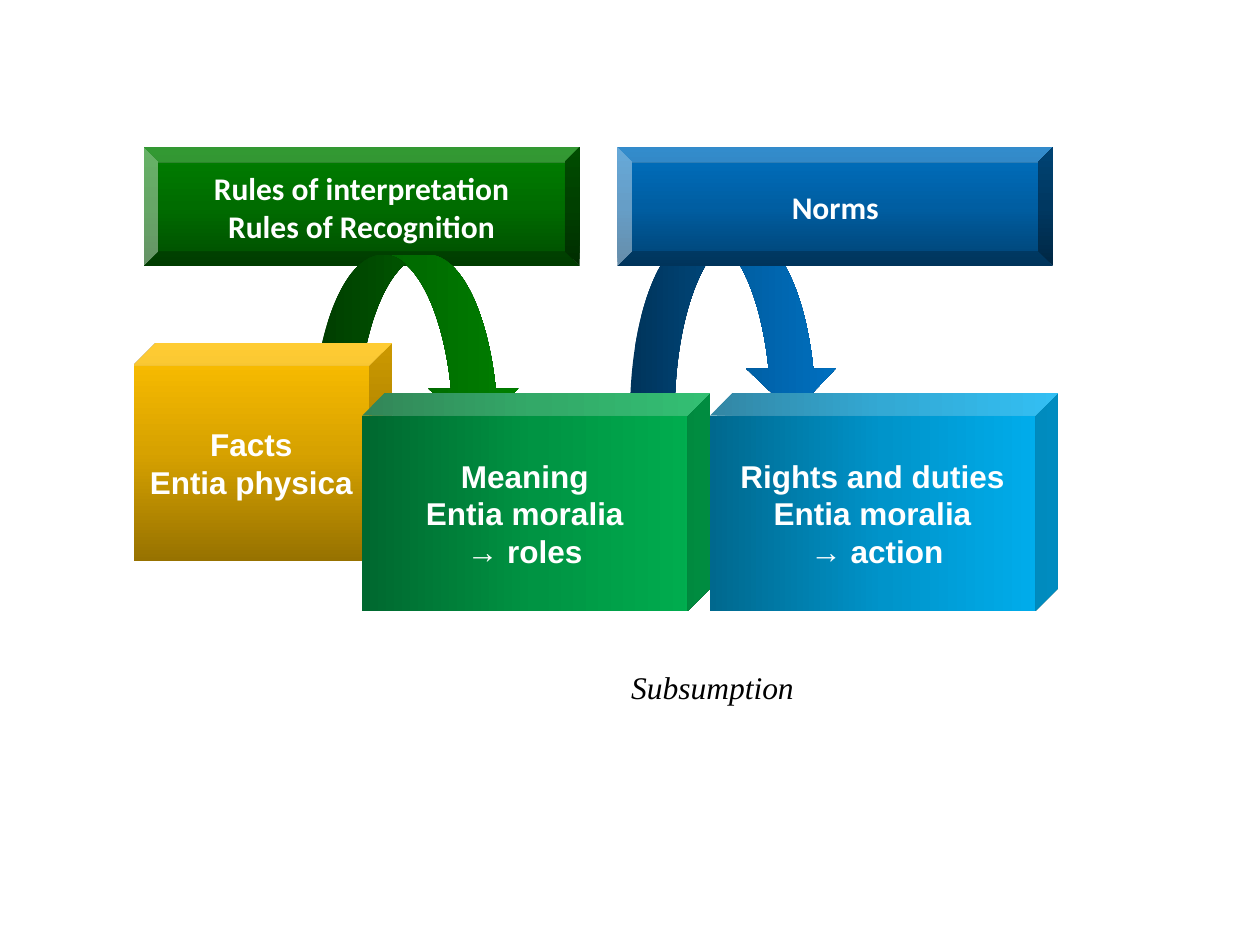
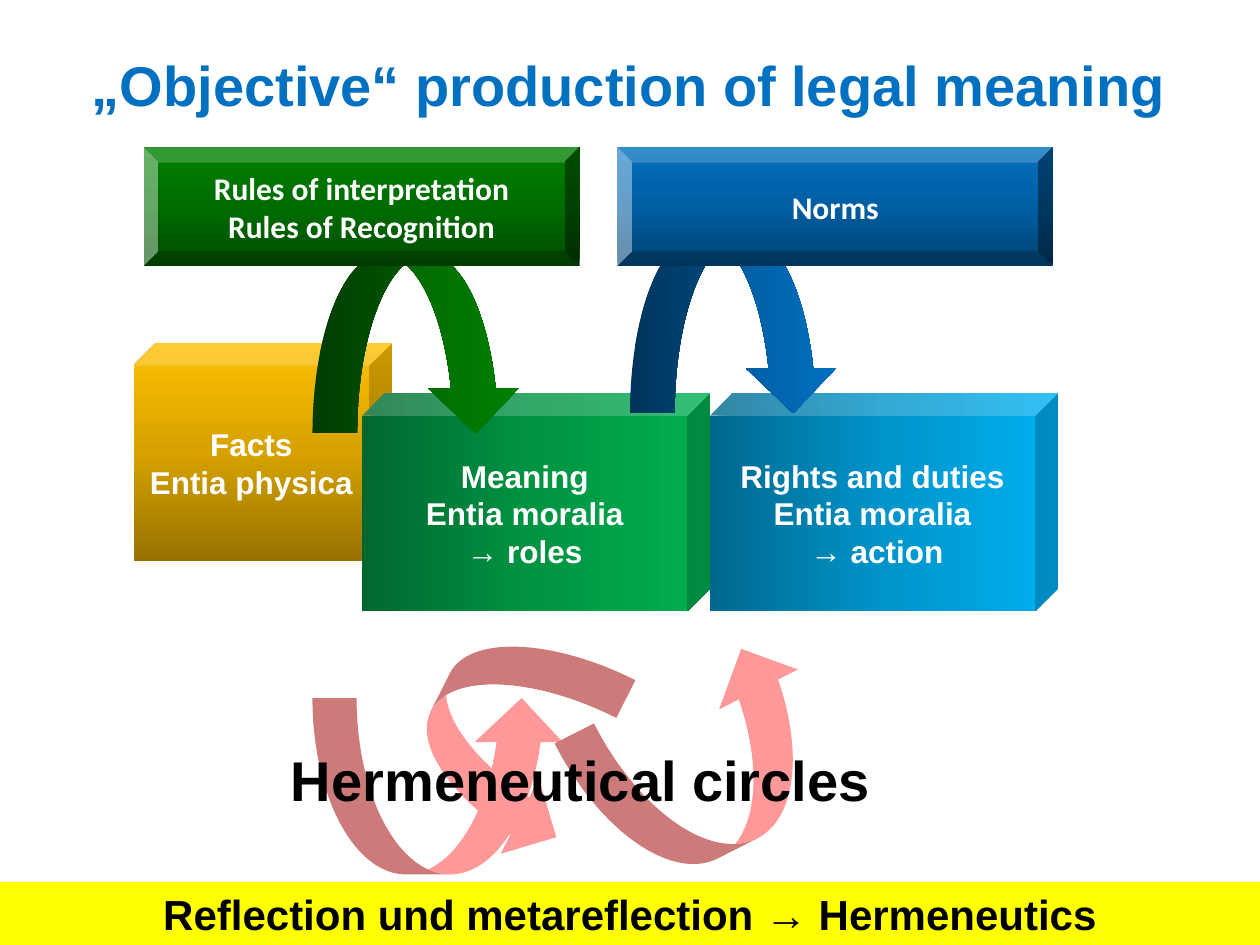
from lxml import etree
from pptx import Presentation, util as u
from pptx.dml.color import RGBColor
from pptx.enum import shapes, text
from pptx.oxml.ns import qn

Kind = shapes.MSO_SHAPE
GREEN = ("004C00", "006C00", "008000")
BLUE = ("004272", "005EA2", "0070C0")
GOLD = ("977200", "D7A200", "FFC000")
MINT = ("00682F", "009443", "00B050")
SKY = ("00688E", "0094CA", "00B0F0")
ROSE, YELLOW, WHITE, BLACK = "FF9999", "FFFF00", "FFFFFF", "000000"
COLS, ROWS = 100, 75


def color(code):
    return RGBColor.from_string(code)


class Deck:
    def __init__(self):
        self.prs = Presentation()
        self.prs.slide_width = u.Inches(10)
        self.prs.slide_height = u.Inches(7.5)
        self.page = None

    def add_page(self, layout):
        self.page = self.prs.slides.add_slide(self.prs.slide_layouts[layout])

    def box(self, left, top, wide, high):
        col = self.prs.slide_width / COLS
        row = self.prs.slide_height / ROWS
        return [u.Emu(round(n)) for n in
                (left * col, top * row, wide * col, high * row)]

    def put_text(self, frame, lines, size=18, font="Arial", ink=WHITE,
                 bold=True, slant=False, wrap=True,
                 anchor=text.MSO_ANCHOR.MIDDLE):
        frame.word_wrap = wrap
        frame.auto_size = text.MSO_AUTO_SIZE.NONE
        frame.vertical_anchor = anchor
        for i, line in enumerate(lines):
            par = frame.add_paragraph() if i else frame.paragraphs[0]
            par.alignment = text.PP_ALIGN.CENTER
            run = par.add_run()
            run.text = line
            run.font.size = u.Pt(size)
            run.font.name = font
            run.font.bold = bold
            run.font.italic = slant
            run.font.color.rgb = color(ink)

    def blend(self, item, tones, angle):
        item.fill.gradient()
        item.fill.gradient_angle = angle
        stops = next(item.element.iter(qn("a:gsLst")))
        for old in list(stops):
            stops.remove(old)
        for pos, tone in zip((0, 50000, 100000), tones):
            stop = etree.SubElement(stops, qn("a:gs"), pos=str(pos))
            etree.SubElement(stop, qn("a:srgbClr"), val=tone)

    def shape(self, kind, area, paint, lines=(), angle=0, turn=0, **style):
        item = self.page.shapes.add_shape(kind, *self.box(*area))
        item.shadow.inherit = False
        item.line.fill.background()
        item.rotation = turn
        if isinstance(paint, str):
            item.fill.solid()
            item.fill.fore_color.rgb = color(paint)
        else:
            self.blend(item, paint, angle)
        self.put_text(item.text_frame, lines, **style)
        return item

    def cube(self, area, paint, lines, angle=0):
        item = self.shape(Kind.CUBE, area, paint, lines, angle)
        item.adjustments[0] = 0.104

    def plate(self, left, paint, lines):
        self.shape(Kind.BEVEL, (left, 11.7, 34.6, 9.4), paint, lines, 90,
                   font="Calibri")

    def label(self, area, line, **style):
        item = self.page.shapes.add_textbox(*self.box(*area))
        self.put_text(item.text_frame, [line], wrap=False, ink=BLACK,
                      anchor=text.MSO_ANCHOR.TOP, **style)

    def title(self, area, line):
        item = self.page.shapes.title
        item.left, item.top, item.width, item.height = self.box(*area)
        self.put_text(item.text_frame, [line], size=32, ink=BLUE[-1],
                      anchor=text.MSO_ANCHOR.TOP)

    def rules(self):
        self.plate(11.4, GREEN, ["Rules of interpretation", "Rules of Recognition"])

    def norms(self):
        self.plate(49, BLUE, ["Norms"])

    def arcs(self):
        for left, top, paint in ((24.8, 20.2, GREEN), (50, 18.6, BLUE)):
            self.shape(Kind.CURVED_DOWN_ARROW, (left, top, 16.5, 14.2), paint)

    def cubes(self):
        self.cube((10.6, 27.2, 20.5, 17.3), GOLD, ["Facts", "Entia physica"], 90)
        sets = ((MINT, ["Meaning", "Entia moralia", "→ roles"]),
                (SKY, ["Rights and duties", "Entia moralia", " → action"]))
        for i, (paint, lines) in enumerate(sets):
            self.cube((28.75 + 27.6 * i, 31.2, 27.6, 17.3), paint, lines)


def main():
    deck = Deck()

    deck.add_page(6)
    deck.rules()
    deck.arcs()
    deck.norms()
    deck.cubes()
    deck.label((49, 52.5, 15.1, 4), "Subsumption",
               font="Times New Roman", bold=False, slant=True)

    deck.add_page(5)
    deck.title((0.3, 3.5, 99.3, 6.4), "„Objective“ production of legal meaning")
    loops = (((24.8, 55.4, 20.1, 14), 0),
             ((31.9, 52, 17.3, 13.4), 116.7),
             ((46.1, 53.7, 20.1, 14), 333.1))
    for area, turn in loops:
        deck.shape(Kind.CURVED_UP_ARROW, area, ROSE, turn=turn)
    deck.label((21.9, 58.7, 48.4, 6.4), "Hermeneutical circles", size=32)
    deck.cubes()
    deck.shape(Kind.RECTANGLE, (0, 70, COLS, 5), YELLOW,
               ["Reflection und metareflection → Hermeneutics"],
               size=24, ink=BLACK, anchor=text.MSO_ANCHOR.TOP)
    deck.arcs()
    deck.rules()
    deck.norms()

    deck.prs.save("out.pptx")


if __name__ == "__main__":
    main()
